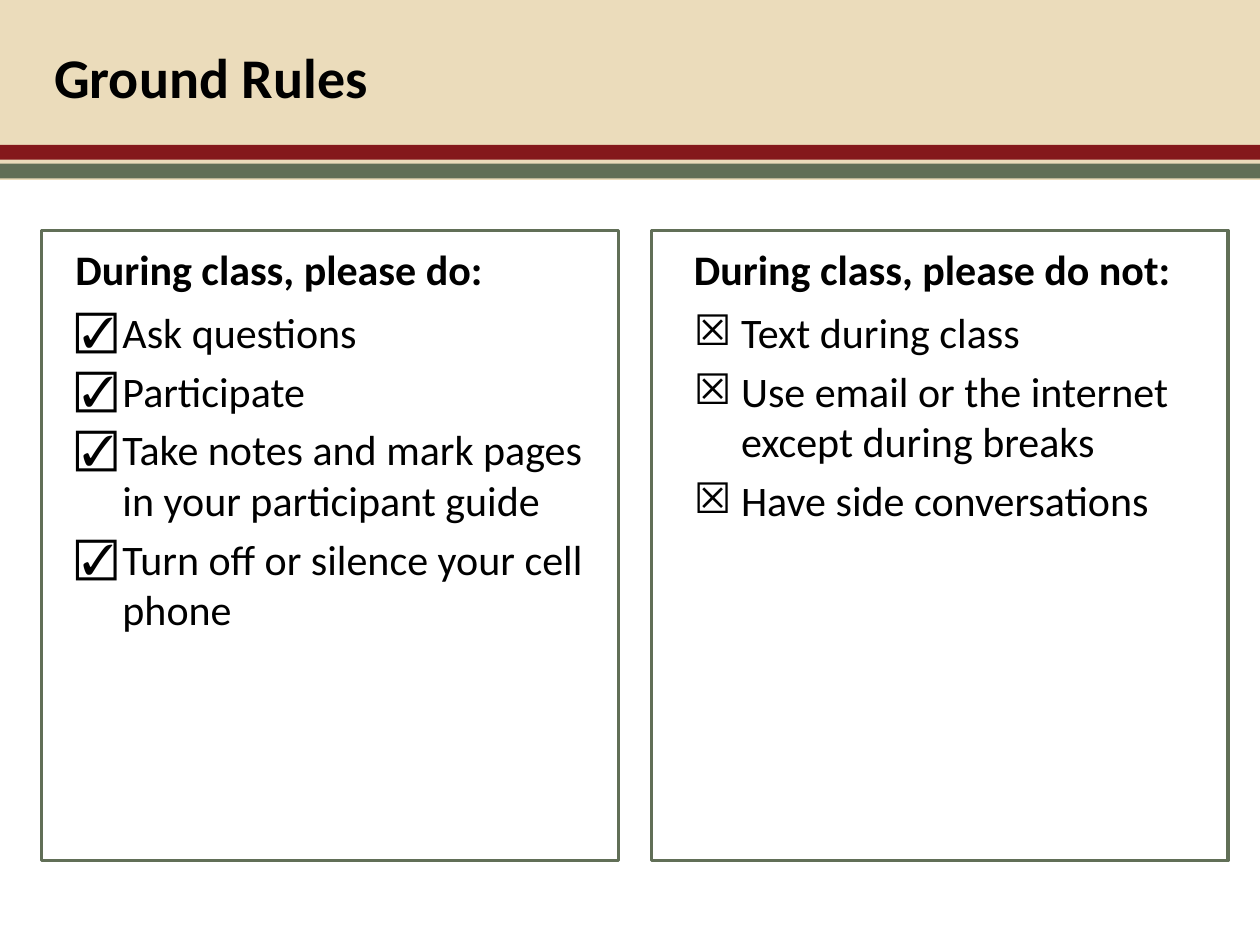
from lxml.etree import SubElement
from pptx import Presentation
from pptx.dml.color import RGBColor
from pptx.enum.shapes import MSO_SHAPE as Shape
from pptx.enum.text import MSO_ANCHOR as Anchor
from pptx.oxml.ns import qn
from pptx.util import Cm, Pt

SAND = RGBColor(0xEB, 0xDC, 0xBB)
MAROON = RGBColor(0x84, 0x18, 0x1B)
GREEN = RGBColor(0x61, 0x6F, 0x57)
BLACK = RGBColor(0, 0, 0)

FONT = "Calibri"
INDENT = Cm(0.95)
TEXT_W = 11.23

PANELS = [
    (0.84, 1.27, "During class, please do:", "☑", [
        "Ask questions",
        "Participate",
        "Take notes and mark pages in your participant guide",
        "Turn off or silence your cell phone",
    ]),
    (13.13, 13.74, "During class, please do not:", "☒", [
        "Text during class",
        "Use email or the internet except during breaks",
        "Have side conversations",
    ]),
]


def add_rect(slide, x, y, w, h, fill=None, line=None):
    sp = slide.shapes.add_shape(Shape.RECTANGLE, Cm(x), Cm(y), Cm(w), Cm(h))
    sp.shadow.inherit = False
    if fill is None:
        sp.fill.background()
    else:
        sp.fill.solid()
        sp.fill.fore_color.rgb = fill
    if line is None:
        sp.line.fill.background()
    else:
        sp.line.color.rgb = line
        sp.line.width = Pt(2)


def set_bullet(p, char):
    pPr = p._p.get_or_add_pPr()
    pPr.set("marL", str(INDENT))
    pPr.set("indent", str(-INDENT))
    SubElement(pPr, qn("a:buFont")).set("typeface", FONT)
    SubElement(pPr, qn("a:buChar")).set("char", char)


def add_text(slide, x, y, w, h, lines, size=24, bold=False,
             anchor=Anchor.TOP, bullet=None):
    tf = slide.shapes.add_textbox(Cm(x), Cm(y), Cm(w), Cm(h)).text_frame
    tf.word_wrap = True
    tf.vertical_anchor = anchor
    for i, line in enumerate(lines):
        p = tf.add_paragraph() if i else tf.paragraphs[0]
        if i:
            p.space_before = Pt(4.8)
        if bullet:
            set_bullet(p, bullet)
        r = p.add_run()
        r.text = line
        r.font.name = FONT
        r.font.size = Pt(size)
        r.font.bold = bold
        r.font.color.rgb = BLACK


def add_header(slide, title):
    for y, h, color in [(0, 3.63, SAND), (2.92, 0.3, MAROON), (3.3, 0.3, GREEN)]:
        add_rect(slide, 0, y, 25.4, h, fill=color)
    add_text(slide, 0.84, 0, 20.83, 3.05, [title], size=32, bold=True,
             anchor=Anchor.MIDDLE)


def add_panel(slide, frame_x, text_x, heading, bullet, rules):
    add_rect(slide, frame_x, 4.65, 11.63, 12.7, line=GREEN)
    add_text(slide, text_x, 4.27, TEXT_W, 1.78, [heading], bold=True,
             anchor=Anchor.BOTTOM)
    add_text(slide, text_x, 6.05, TEXT_W, 10.97, rules, bullet=bullet)


def main():
    prs = Presentation()
    prs.slide_width, prs.slide_height = Cm(25.4), Cm(19.05)
    s = prs.slides.add_slide(prs.slide_layouts[6])
    add_header(s, "Ground Rules")
    for panel in PANELS:
        add_panel(s, *panel)
    prs.save("out.pptx")


if __name__ == "__main__":
    main()
